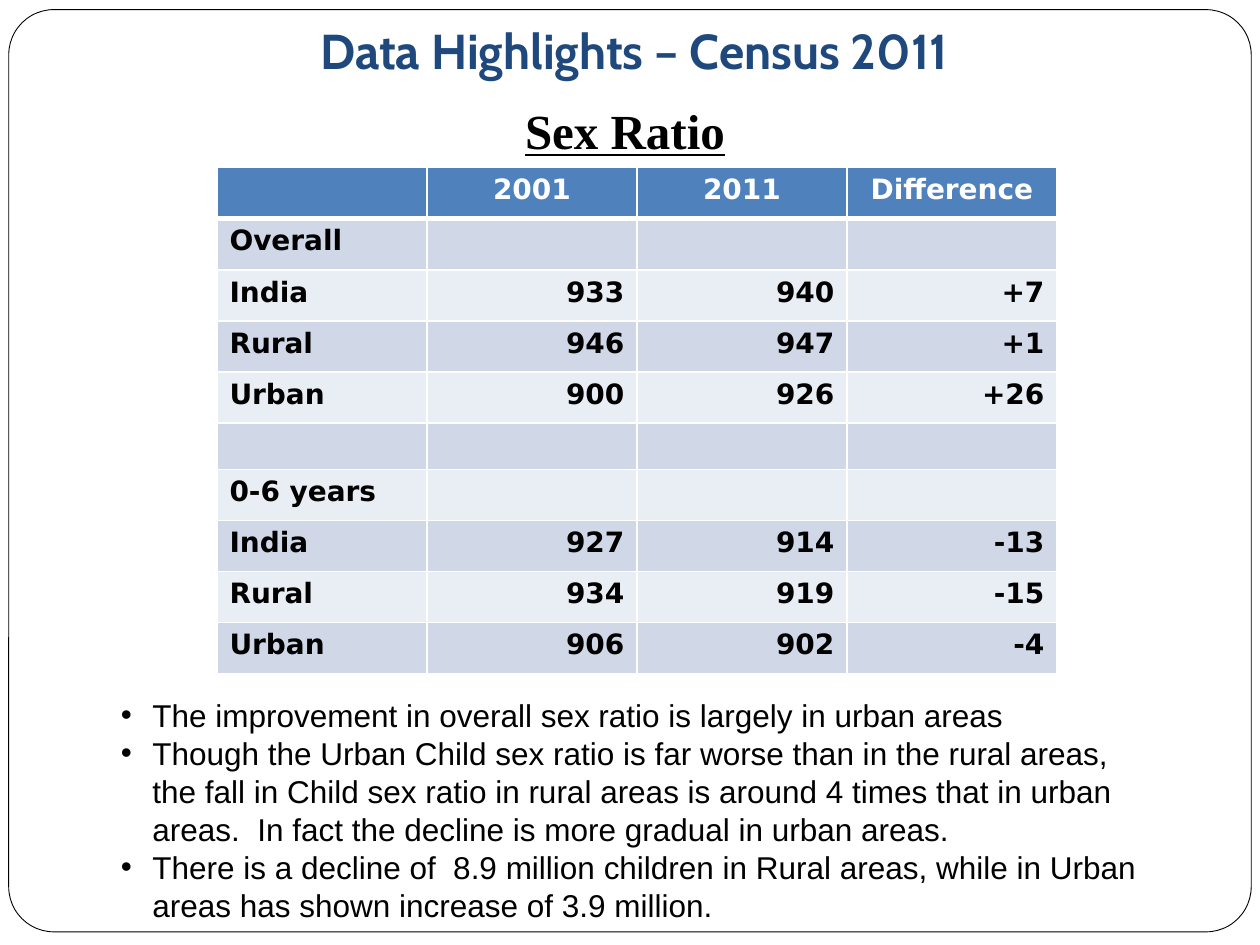
from lxml.etree import SubElement
from pptx import Presentation
from pptx.dml.color import RGBColor
from pptx.enum.shapes import MSO_SHAPE as Shape
from pptx.enum.text import MSO_ANCHOR as Anchor, MSO_AUTO_SIZE as AutoSize, PP_ALIGN as Align
from pptx.oxml.ns import qn
from pptx.util import Pt

BLACK, WHITE, NAVY = "000000", "FFFFFF", "1F497D"
HEADER_FILL, BANDS = "4F81BD", ("D0D8E8", "E9EDF4")
ROW_HEIGHT, BLANK_ROW_HEIGHT, COL_WIDTH = 29.2, 26.4, 120

ROWS = [
    ("", "2001", "2011", "Difference"),
    ("Overall", "", "", ""),
    ("India", "933", "940", "+7"),
    ("Rural", "946", "947", "+1"),
    ("Urban", "900", "926", "+26"),
    ("", "", "", ""),
    ("0-6 years", "", "", ""),
    ("India", "927", "914", "-13"),
    ("Rural", "934", "919", "-15"),
    ("Urban", "906", "902", "-4"),
]
FINDINGS = [
    "The improvement in overall sex ratio is largely in urban areas",
    "Though the Urban Child sex ratio is far worse than in the rural areas, "
    "the fall in Child sex ratio in rural areas is around 4 times that in urban areas.  "
    "In fact the decline is more gradual in urban areas.",
    "There is a decline of  8.9 million children in Rural areas, "
    "while in Urban areas has shown increase of 3.9 million.",
]


def rgb(color):
    return RGBColor.from_string(color)


def set_text(p, text, font, size, color, align=Align.LEFT, bold=False, underline=False):
    p.text = text
    p.alignment = align
    for r in p.runs:
        f = r.font
        f.name, f.size, f.bold, f.underline = font, Pt(size), bold, underline
        f.color.rgb = rgb(color)


def add_text_box(s, left, top, width, height):
    tf = s.shapes.add_textbox(Pt(left), Pt(top), Pt(width), Pt(height)).text_frame
    tf.word_wrap = True
    return tf


def add_frame(s):
    sp = s.shapes.add_shape(Shape.ROUNDED_RECTANGLE, Pt(5), Pt(5.5), Pt(710), Pt(527))
    sp.adjustments[0] = 0.049
    sp.shadow.inherit = False
    sp.fill.solid()
    sp.fill.fore_color.rgb = rgb(WHITE)
    sp.line.color.rgb = rgb(BLACK)
    sp.line.width = Pt(0.5)


def add_title(s):
    tf = add_text_box(s, 67.7, 5.8, 590.4, 39.6)
    tf.margin_left = tf.margin_top = tf.margin_bottom = 0
    tf.margin_right = Pt(1.4)
    tf.vertical_anchor = Anchor.BOTTOM
    set_text(tf.paragraphs[0], "Data Highlights – Census 2011", "Cabin", 28, NAVY,
             Align.CENTER, bold=True)


def add_subtitle(s):
    tf = add_text_box(s, 202.3, 54, 309.6, 41)
    tf.auto_size = AutoSize.SHAPE_TO_FIT_TEXT
    set_text(tf.paragraphs[0], "Sex Ratio", "Times New Roman", 28, BLACK,
             Align.CENTER, bold=True, underline=True)


def set_borders(cell, bottom_width):
    """Draw white borders; they must come before the fill in the cell's XML."""
    tc_pr = cell._tc.get_or_add_tcPr()
    for side, width in (("L", 1), ("R", 1), ("T", 1), ("B", bottom_width)):
        ln = SubElement(tc_pr, qn(f"a:ln{side}"), w=str(Pt(width)))
        SubElement(SubElement(ln, qn("a:solidFill")), qn("a:srgbClr"), val=WHITE)


def fill_cell(cell, text, row, col):
    header = row == 0
    set_borders(cell, 3 if header else 1)
    cell.fill.solid()
    cell.fill.fore_color.rgb = rgb(HEADER_FILL if header else BANDS[(row - 1) % 2])
    p = cell.text_frame.paragraphs[0]
    if text:
        align = Align.CENTER if header else Align.RIGHT if col else Align.LEFT
        set_text(p, text, "DejaVu Sans", 16, WHITE if header else BLACK, align, bold=True)
    else:
        # Keeps empty cells from stretching their row
        SubElement(p._p, qn("a:endParaRPr"), sz="1200")


def add_ratio_table(s):
    n_cols = len(ROWS[0])
    heights = [ROW_HEIGHT if any(values) else BLANK_ROW_HEIGHT for values in ROWS]
    table = s.shapes.add_table(len(ROWS), n_cols, Pt(124), Pt(95.8),
                               Pt(COL_WIDTH * n_cols), Pt(sum(heights))).table
    for column in table.columns:
        column.width = Pt(COL_WIDTH)
    for row, values in enumerate(ROWS):
        table.rows[row].height = Pt(heights[row])
        for col, text in enumerate(values):
            fill_cell(table.cell(row, col), text, row, col)


def add_findings(s):
    tf = add_text_box(s, 62, 393.8, 602, 138.2)
    tf.auto_size = AutoSize.SHAPE_TO_FIT_TEXT
    for i, text in enumerate(FINDINGS):
        p = tf.add_paragraph() if i else tf.paragraphs[0]
        set_text(p, text, "Arial", 18, BLACK)
        p.line_spacing = Pt(21.7)
        p_pr = p._p.get_or_add_pPr()
        p_pr.set("marL", str(Pt(18)))
        p_pr.set("indent", str(Pt(-18)))
        SubElement(p_pr, qn("a:buFont"), typeface="Arial")
        SubElement(p_pr, qn("a:buChar"), char="•")


def main():
    prs = Presentation()
    prs.slide_width, prs.slide_height = Pt(720), Pt(540)
    s = prs.slides.add_slide(prs.slide_layouts[6])
    add_frame(s)
    add_findings(s)
    add_ratio_table(s)
    add_title(s)
    add_subtitle(s)
    prs.save("out.pptx")


if __name__ == "__main__":
    main()
